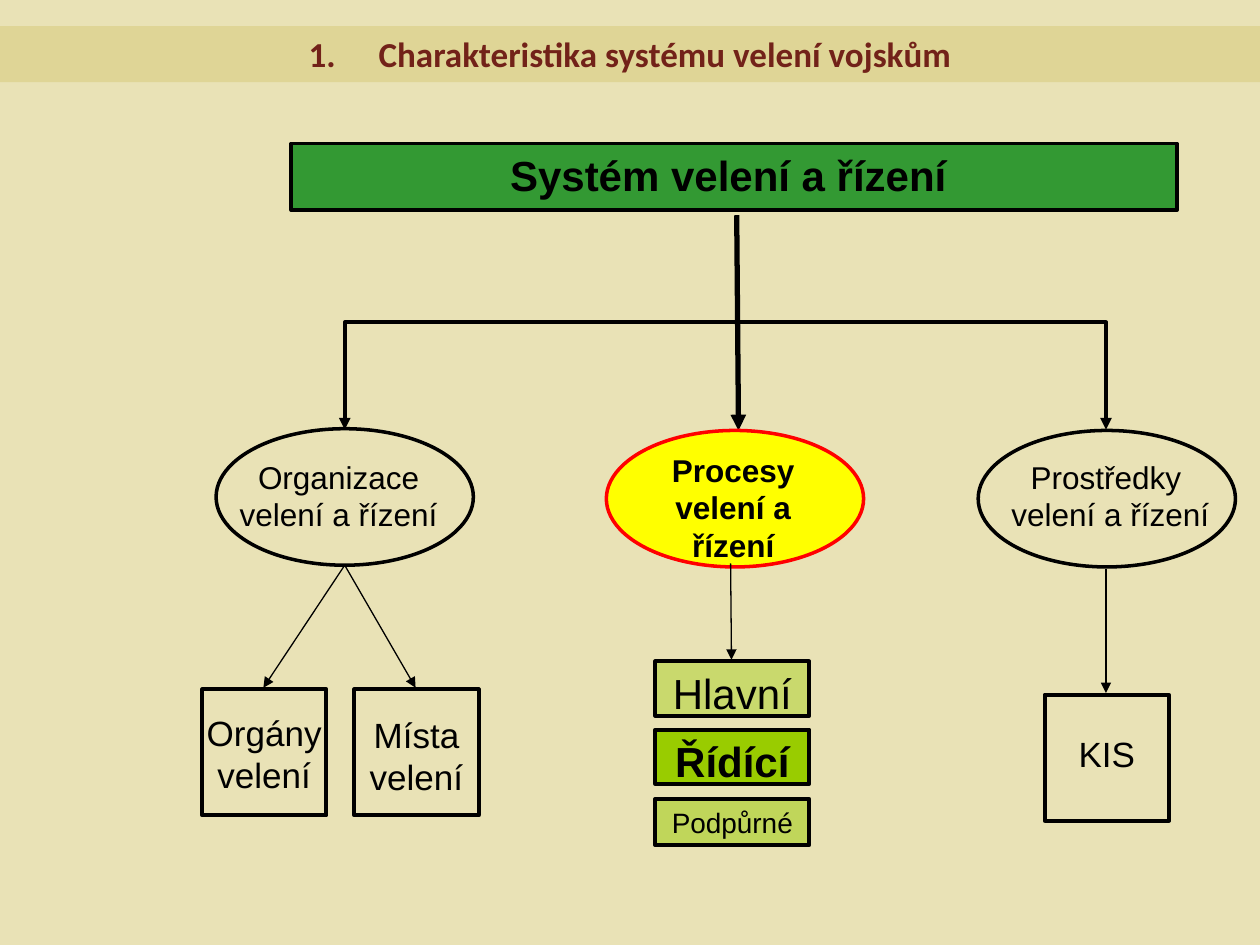
from lxml.etree import SubElement
from pptx import Presentation
from pptx.dml.color import RGBColor
from pptx.enum.shapes import MSO_CONNECTOR, MSO_SHAPE
from pptx.enum.text import MSO_ANCHOR, PP_ALIGN
from pptx.oxml.ns import qn
from pptx.util import Pt

COLORS = {"page": "E9E2B6", "bar": "DFD596", "title": "722219",
          "ink": "000000", "root": "339933", "focus": "FFFF00",
          "rim": "FF0000", "lime": "99CC00"}
OVAL = (147, 78)
LEAF = (71, 72)


def rgb(name):
    return RGBColor.from_string(COLORS[name])


def write(shape, text, size, bold=False, color="ink", font="Arial"):
    frame = shape.text_frame
    frame.word_wrap = True
    frame.vertical_anchor = MSO_ANCHOR.TOP
    frame.text = text
    para = frame.paragraphs[0]
    para.alignment = PP_ALIGN.CENTER
    for run in para.runs:
        run.font.name = font
        run.font.size = Pt(size)
        run.font.bold = bold
        run.font.color.rgb = rgb(color)
    return para


def label(slide, box, text, size, bold=False):
    write(slide.shapes.add_textbox(*map(Pt, box)), text, size, bold)


def block(slide, box, fill=None, line="ink", width=2.25, alpha=None,
          kind=MSO_SHAPE.RECTANGLE):
    shape = slide.shapes.add_shape(kind, *map(Pt, box))
    shape.shadow.inherit = False
    if fill:
        shape.fill.solid()
        shape.fill.fore_color.rgb = rgb(fill)
    else:
        shape.fill.background()
    if alpha:
        tint = next(shape.fill._xPr.iter(qn("a:srgbClr")))
        SubElement(tint, qn("a:alpha"), val=str(alpha * 1000))
    if line:
        shape.line.color.rgb = rgb(line)
        shape.line.width = Pt(width)
    else:
        shape.line.fill.background()
    return shape


def arrow(slide, start, end, width=0.75, kind=MSO_CONNECTOR.STRAIGHT):
    link = slide.shapes.add_connector(kind, *map(Pt, (*start, *end)))
    link.line.color.rgb = rgb("ink")
    link.line.width = Pt(width)
    SubElement(link.line._get_or_add_ln(), qn("a:tailEnd"), type="triangle")
    SubElement(link._element.spPr, qn("a:effectLst"))
    return link


def elbow(slide, start, end):
    """Arrow that leaves downwards, runs sideways, then drops to its end."""
    (x, y), (tip, foot) = start, end
    mid, level = (x + tip) / 2, (y + foot) / 2
    half, rise = (foot - y) / 2, abs(tip - x) / 2
    turn = 90 if tip < x else 270
    side = half if tip < x else -half
    link = arrow(slide, (mid - side, level - rise),
                 (mid + side, level + rise), 2.25, MSO_CONNECTOR.ELBOW)
    link._element.spPr.find(qn("a:xfrm")).set("rot", str(turn * 60000))


def header(slide, box):
    bar = block(slide, box, "bar", None)
    para = write(bar, "Charakteristika systému velení vojskům", 20, True,
                 "title", "Calibri")
    props = para._p.get_or_add_pPr()
    props.set("marL", str(Pt(40)))
    props.set("indent", str(Pt(-40)))
    SubElement(props, qn("a:buFont"), typeface="+mj-lt")
    SubElement(props, qn("a:buAutoNum"), type="arabicPeriod")


def root(slide, box):
    write(block(slide, box, "root"), "Systém velení a řízení ", 24, True)


def trunk(slide, start, drop, ends):
    x, y = start
    elbow(slide, start, (ends[0], y + drop))
    arrow(slide, start, (x + 1, y + drop + 0.5), 3)
    elbow(slide, start, (ends[1], y + drop))


def oval(slide, left, top, text, shift, bold=False, fill=None, line="ink"):
    block(slide, (left, top, *OVAL), fill, line, 2, kind=MSO_SHAPE.OVAL)
    across, down = shift
    label(slide, (left + across, top + down, 130, 50), text, 18, bold)


def leaf(slide, left, top, text, inset, drop):
    wide, high = LEAF
    block(slide, (left, top, wide, high))
    label(slide, (left - inset, top + drop, wide + 2 * inset, 50), text, 20)


def staff(slide, left, top):
    oval(slide, left, top, "Organizace velení a řízení", (5, 13))
    leaf(slide, left - 8, top + 149, "Orgány velení", 5, 9)
    leaf(slide, left + 79, top + 149, "Místa velení", 0, 10)
    for tip in (27, 114):
        arrow(slide, (left + 73.5, top + 78), (left + tip, top + 148))


def tasks(slide, left, top):
    oval(slide, left, top, "Procesy\vvelení a řízení", (7.5, 8), True,
         "focus", "rim")
    rows = [("Hlavní", 132, 31, 24, False, 40),
            ("Řídící", 171, 31, 24, True, None),
            ("Podpůrné", 210.5, 26.5, 16, False, 50)]
    for text, down, high, size, bold, alpha in rows:
        shape = block(slide, (left + 28, top + down, 88, high), "lime",
                      alpha=alpha)
        write(shape, text, size, bold)
    arrow(slide, (left + 71, top + 76), (left + 71.5, top + 131))


def means(slide, left, top):
    oval(slide, left, top, "Prostředky \vvelení a řízení", (10.5, 12))
    leaf(slide, left + 38, top + 151, "KIS", 0, 18)
    arrow(slide, (left + 73, top + 79), (left + 73, top + 150))


def main():
    deck = Presentation()
    deck.slide_width, deck.slide_height = Pt(720), Pt(540)
    slide = deck.slides.add_slide(deck.slide_layouts[6])
    slide.background.fill.solid()
    slide.background.fill.fore_color.rgb = rgb("page")
    header(slide, (0, 15, 720, 32))
    trunk(slide, (421, 123), 122.5, (197, 632))
    root(slide, (166.5, 82, 506, 38))
    staff(slide, 123.5, 245)
    tasks(slide, 346.5, 246)
    means(slide, 559, 246)
    deck.save("out.pptx")


if __name__ == "__main__":
    main()
